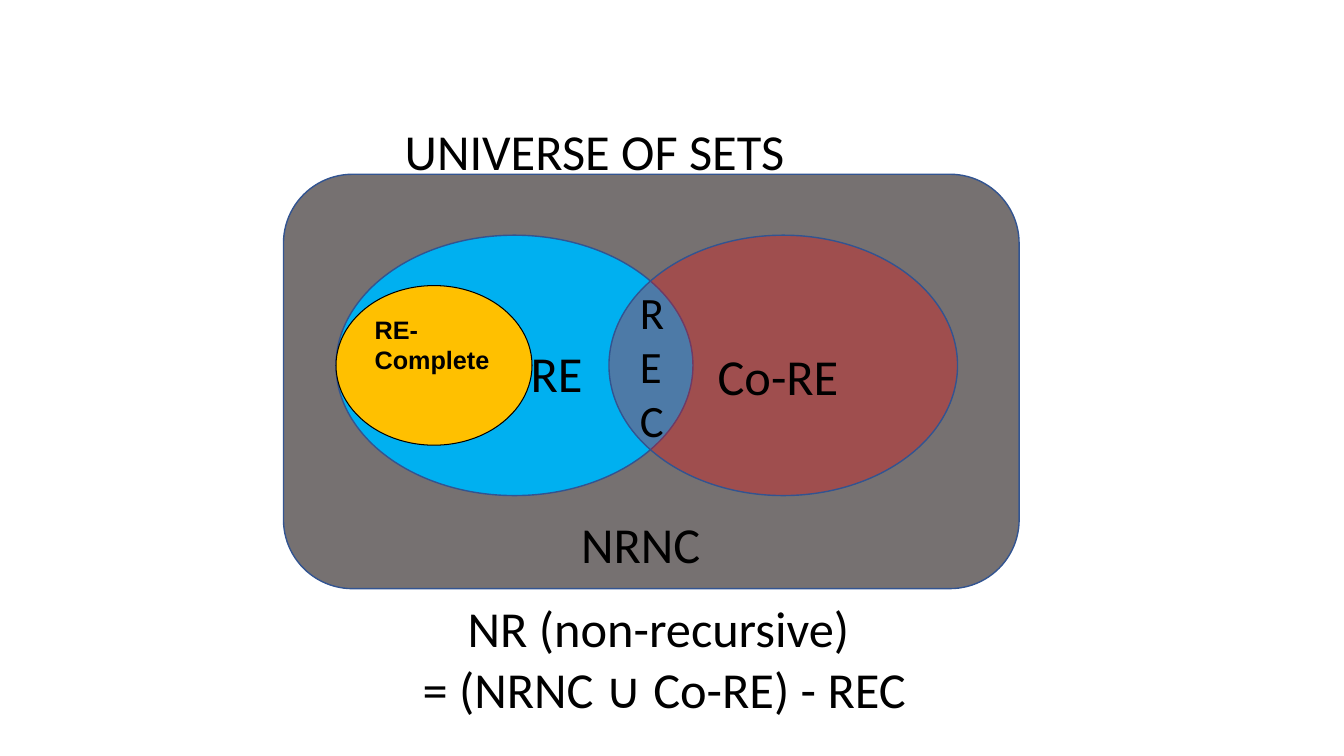
from pptx import Presentation
from pptx.dml.color import RGBColor
from pptx.enum.shapes import MSO_SHAPE
from pptx.enum.text import MSO_ANCHOR, PP_ALIGN
from pptx.oxml.ns import qn
from pptx.util import Pt
from lxml import etree

ROUNDED = MSO_SHAPE.ROUNDED_RECTANGLE
OVAL = MSO_SHAPE.OVAL
TOP = MSO_ANCHOR.TOP
LEFT, CENTER = PP_ALIGN.LEFT, PP_ALIGN.CENTER

COLORS = {
    "universe": "767171",
    "re": "00B0F0",
    "co_re": "FF0000",
    "complete": "FFC000",
    "outline": "325491",
    "ink": "000000",
}


class SetDiagram:
    def __init__(self, page, font="Calibri", size=36):
        self.page = page
        self.font = font
        self.size = size

    def color(self, name):
        return RGBColor.from_string(COLORS[name])

    def region(self, kind, box, fill, line="outline", weight=1, opacity=None):
        shape = self.page.shapes.add_shape(kind, *map(Pt, box))
        shape.shadow.inherit = False
        shape.fill.solid()
        shape.fill.fore_color.rgb = self.color(fill)
        shape.line.color.rgb = self.color(line)
        shape.line.width = Pt(weight)
        if opacity is not None:
            fill_color = shape._element.spPr.find(qn("a:solidFill"))[0]
            etree.SubElement(fill_color, qn("a:alpha"), val=str(opacity * 1000))
        return shape

    def add_lines(self, frame, lines, size=None, font=None, bold=False, align=LEFT):
        frame.word_wrap = True
        frame.vertical_anchor = TOP
        for index, line in enumerate(lines):
            para = frame.paragraphs[0] if index == 0 else frame.add_paragraph()
            para.alignment = align
            span = para.add_run()
            span.text = line
            span.font.name = font or self.font
            span.font.size = Pt(size or self.size)
            span.font.bold = bold
            span.font.color.rgb = self.color("ink")

    def label(self, box, *lines, **style):
        text_box = self.page.shapes.add_textbox(*map(Pt, box))
        self.add_lines(text_box.text_frame, lines, **style)


def main():
    deck = Presentation()
    deck.slide_width, deck.slide_height = Pt(960), Pt(540)
    diagram = SetDiagram(deck.slides.add_slide(deck.slide_layouts[6]))

    diagram.region(ROUNDED, (202.5, 124.5, 525.5, 296), "universe")
    diagram.region(OVAL, (240, 168, 255, 186), "re")
    diagram.region(OVAL, (435, 168, 249, 186), "co_re", opacity=30)

    diagram.label((372, 241, 75, 51), "RE")
    diagram.label((505.5, 243, 130, 51), "Co-RE")
    # The narrow box stacks the letters one per line.
    diagram.label((450, 200, 21, 124), "REC", size=32)
    diagram.label((282, 82.5, 372, 51), "UNIVERSE OF SETS")
    diagram.label((408, 363, 122, 51), "NRNC")
    diagram.label((192, 423, 557, 94), "NR (non-recursive)",
                  " = (NRNC ∪ Co-RE) - REC", align=CENTER)

    complete = diagram.region(OVAL, (240, 204, 140, 114), "complete", "ink", 0.75)
    diagram.add_lines(complete.text_frame, ["RE-Complete"], size=18, font="Arial", bold=True)

    deck.save("out.pptx")


if __name__ == "__main__":
    main()
